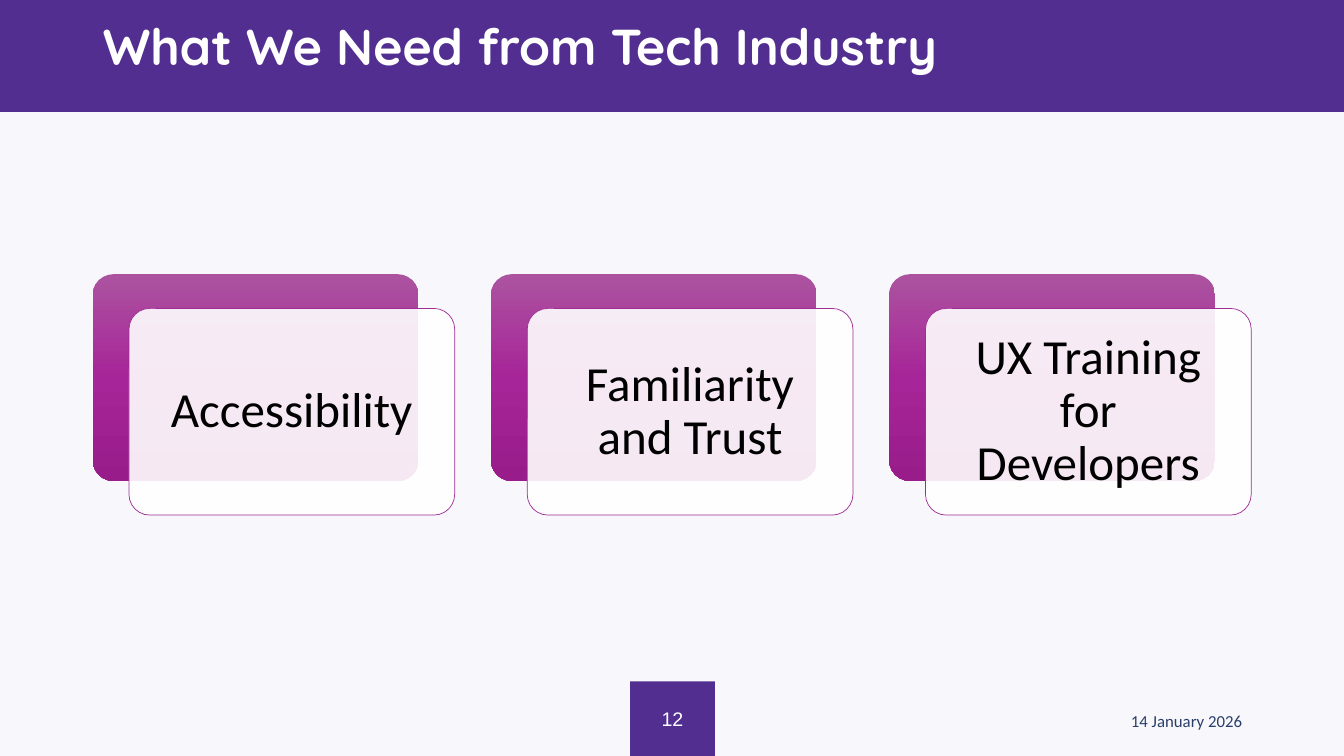
from copy import deepcopy

from lxml import etree
from pptx import Presentation
from pptx.dml.color import RGBColor
from pptx.enum.shapes import MSO_SHAPE
from pptx.enum.text import MSO_ANCHOR, MSO_AUTO_SIZE, PP_ALIGN
from pptx.oxml.ns import qn
from pptx.util import Inches, Pt

RECT, ROUNDED = MSO_SHAPE.RECTANGLE, MSO_SHAPE.ROUNDED_RECTANGLE
LEFT, CENTER, RIGHT = PP_ALIGN.LEFT, PP_ALIGN.CENTER, PP_ALIGN.RIGHT
MIDDLE = MSO_ANCHOR.MIDDLE

COLORS = {
    "background": "F8F7FB", "purple": "522E91", "white": "FFFFFF",
    "black": "000000", "navy": "2A3E6B", "border": "A02B93",
    "grad_top": "AC53A0", "grad_mid": "A62598", "grad_bottom": "991C8B",
}


def rgb(name):
    return RGBColor.from_string(COLORS[name])


def write(shape, text, color, align, spacing=1.0, **font):
    """Fill a shape with one vertically centred, wrapped paragraph."""
    tf = shape.text_frame
    tf.word_wrap = True
    tf.auto_size = MSO_AUTO_SIZE.NONE
    tf.vertical_anchor = MIDDLE
    p = tf.paragraphs[0]
    p.alignment = align
    p.line_spacing = spacing
    r = p.add_run()
    r.text = text
    r.font.color.rgb = rgb(color)
    for name, value in font.items():
        setattr(r.font, name, value)


prs = Presentation()
prs.slide_width, prs.slide_height = Inches(13.33), Inches(7.5)
s = prs.slides.add_slide(prs.slide_layouts[5])
s.background.fill.solid()
s.background.fill.fore_color.rgb = rgb("background")

# Header band and page number tab
title = s.shapes.title
bands = []
for box in [(0, 0, 13.33, 1.11), (6.25, 6.76, 0.84, 0.74)]:
    band = s.shapes.add_shape(RECT, *map(Inches, box))
    band.shadow.inherit = False
    band.fill.solid()
    band.fill.fore_color.rgb = rgb("purple")
    band.line.fill.background()
    bands.append(band)
header, page_tab = bands
header._element.addnext(title._element)  # title in front of the band

title.left, title.top = Inches(0.92), Inches(0.1)
title.width, title.height = Inches(11.5), Inches(0.78)
write(title, "What We Need from Tech Industry", "white", LEFT, 0.9,
      name="Quicksand", size=Pt(36), bold=True)
write(page_tab, "12", "white", CENTER, name="Arial", size=Pt(14))

date = s.shapes.add_textbox(Inches(9.42), Inches(6.95), Inches(3), Inches(0.4))
write(date, "14 January 2026", "navy", RIGHT, name="Calibri", size=Pt(12))

# Three needs: a gradient plate with a translucent card offset in front
NEEDS = ["Accessibility", "Familiarity and Trust", "UX Training for Developers"]
STOPS = [(0, "grad_top"), (0.5, "grad_mid"), (1, "grad_bottom")]
PITCH = 3.95

for i, need in enumerate(NEEDS):
    left = 0.92 + i * PITCH
    plate, card = [
        s.shapes.add_shape(ROUNDED, Inches(left + dx), Inches(2.72 + dy),
                           Inches(3.23), Inches(2.05))
        for dx, dy in [(0, 0), (0.36, 0.34)]
    ]
    for shape in (plate, card):
        shape.shadow.inherit = False
        shape.adjustments[0] = 0.1

    plate.line.fill.background()
    plate.fill.gradient()
    plate.fill.gradient_angle = 270
    first_stop = plate._element.spPr.find(".//" + qn("a:gs"))
    first_stop.addnext(deepcopy(first_stop))
    for stop, (position, color) in zip(plate.fill.gradient_stops, STOPS):
        stop.position = position
        stop.color.rgb = rgb(color)

    card.fill.solid()
    card.fill.fore_color.rgb = rgb("white")
    white = card._element.spPr.find(qn("a:solidFill")).find(qn("a:srgbClr"))
    etree.SubElement(white, qn("a:alpha")).set("val", "90000")
    card.line.color.rgb = rgb("border")
    card.line.width = Pt(0.5)

    write(card, need, "black", CENTER, 0.9, name="Calibri", size=Pt(35))
    for side in ("left", "top", "right", "bottom"):
        setattr(card.text_frame, f"margin_{side}", Inches(0.15))

prs.save("out.pptx")
